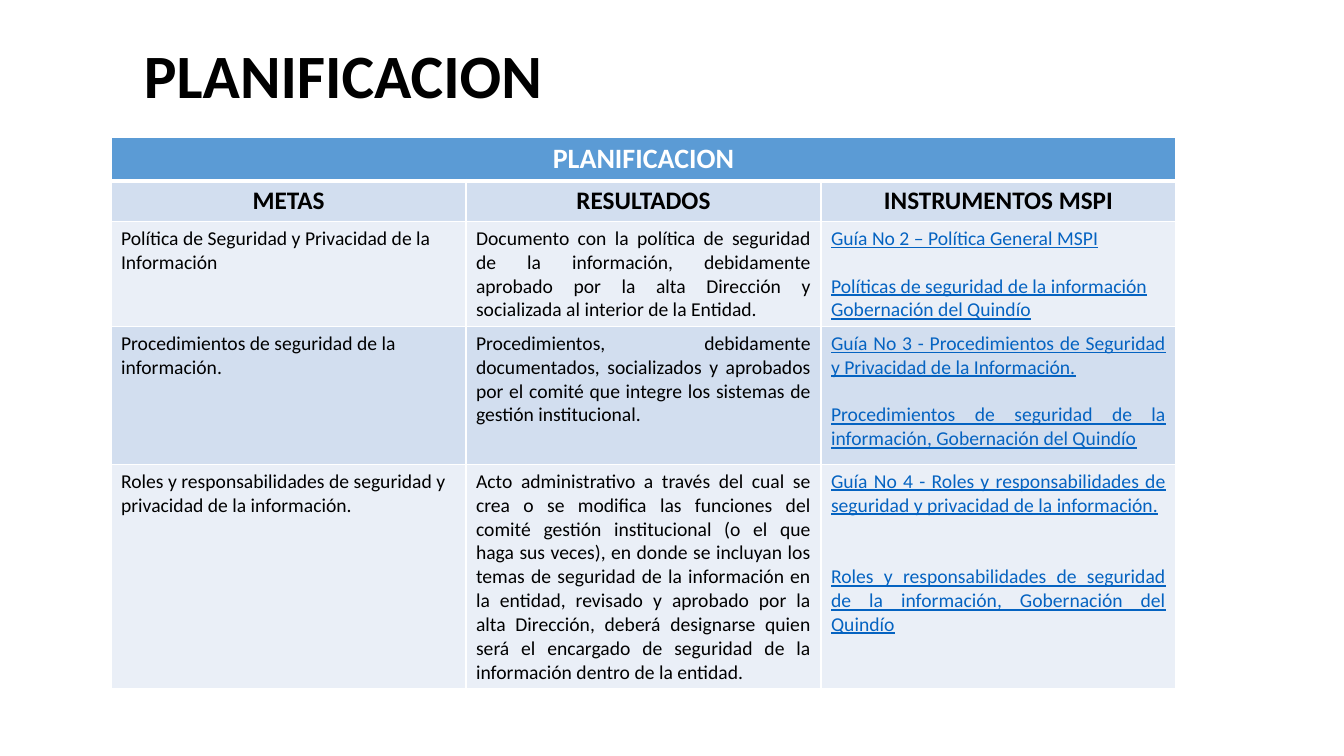
from lxml.etree import SubElement
from pptx import Presentation
from pptx.dml.color import RGBColor
from pptx.enum.text import PP_ALIGN
from pptx.oxml.ns import qn
from pptx.util import Emu, Pt

EMU_PER_PX = 914400 / 100.8
FONT = "Calibri"
BLACK, WHITE, LINK = "000000", "FFFFFF", "0563C1"
HEADER_FILL, BAND_FILLS = "5B9BD5", ("D2DEEF", "EAEFF7")
BLANK_LINE = 17  # points, one line of 14 pt text
COLUMN_WIDTH = 355
ROW_HEIGHTS = (42, 41, 105, 138, 224)

HEADINGS = ("METAS", "RESULTADOS", "INSTRUMENTOS MSPI")
# Each goal: meta, resultado, instrumentos, alignment of instrumentos, lines between them
GOALS = (
    ("Política de Seguridad y Privacidad de la Información",
     "Documento con la política de seguridad de la información, debidamente aprobado "
     "por la alta Dirección y socializada al interior de la Entidad.",
     ("Guía No 2 – Política General MSPI",
      "Políticas de seguridad de la información Gobernación del Quindío"),
     PP_ALIGN.LEFT, 1),
    ("Procedimientos de seguridad de la información.",
     "Procedimientos, debidamente documentados, socializados y aprobados por el comité "
     "que integre los sistemas de gestión institucional.",
     ("Guía No 3 - Procedimientos de Seguridad y Privacidad de la Información.",
      "Procedimientos de seguridad de la información, Gobernación del Quindío"),
     PP_ALIGN.JUSTIFY, 1),
    ("Roles y responsabilidades de seguridad y privacidad de la información.",
     "Acto administrativo a través del cual se crea o se modifica las funciones del "
     "comité gestión institucional (o el que haga sus veces), en donde se incluyan los "
     "temas de seguridad de la información en la entidad, revisado y aprobado por la "
     "alta Dirección, deberá designarse quien será el encargado de seguridad de la "
     "información dentro de la entidad.",
     ("Guía No 4 - Roles y responsabilidades de seguridad y privacidad de la información.",
      "Roles y responsabilidades de seguridad de la información, Gobernación del Quindío"),
     PP_ALIGN.JUSTIFY, 2),
)


def px(length):
    return Emu(round(length * EMU_PER_PX))


def color(hex_code):
    return RGBColor.from_string(hex_code)


def write(frame, lines, size, hex_code=BLACK, bold=False, align=PP_ALIGN.LEFT,
          underline=False, gap=0):
    """Fill a text frame with one paragraph per line, gap points apart."""
    for index, line in enumerate(lines):
        paragraph = frame.paragraphs[0] if index == 0 else frame.add_paragraph()
        paragraph.text = line
        paragraph.alignment = align
        if index:
            paragraph.space_before = Pt(gap)
        font = paragraph.font
        font.name, font.size = FONT, Pt(size)
        font.bold, font.underline = bold, underline
        font.color.rgb = color(hex_code)


def style_cell(cell, fill, top=1, bottom=1):
    """Give a cell its fill and white borders, with top and bottom widths in points."""
    properties = cell._tc.get_or_add_tcPr()
    for side, width in (("L", 1), ("R", 1), ("T", top), ("B", bottom)):
        border = SubElement(properties, qn(f"a:ln{side}"), w=str(Pt(width)))
        SubElement(SubElement(border, qn("a:solidFill")), qn("a:srgbClr"), val=WHITE)
    cell.fill.solid()
    cell.fill.fore_color.rgb = color(fill)


def add_title(slide, title):
    frame = slide.shapes.add_textbox(px(134), px(40), px(1159), px(146)).text_frame
    frame.word_wrap = True
    write(frame, [title], 44, bold=True)
    frame.paragraphs[0].line_spacing = 0.9


def add_plan_table(slide):
    table = slide.shapes.add_table(
        len(ROW_HEIGHTS), len(HEADINGS), px(111), px(137),
        px(COLUMN_WIDTH * len(HEADINGS)), px(sum(ROW_HEIGHTS))).table
    for column in table.columns:
        column.width = px(COLUMN_WIDTH)
    for row, height in zip(table.rows, ROW_HEIGHTS):
        row.height = px(height)

    for row_index, row in enumerate(table.rows):
        fill = BAND_FILLS[(row_index - 1) % 2] if row_index else HEADER_FILL
        for cell in row.cells:
            style_cell(cell, fill, top=3 if row_index == 1 else 1,
                       bottom=3 if row_index == 0 else 1)

    banner = table.cell(0, 0)
    banner.merge(table.cell(0, len(HEADINGS) - 1))
    write(banner.text_frame, ["PLANIFICACION"], 20, WHITE, True, PP_ALIGN.CENTER)
    for column_index, heading in enumerate(HEADINGS):
        write(table.cell(1, column_index).text_frame, [heading], 18, bold=True,
              align=PP_ALIGN.CENTER)
    for row_index, (goal, result, tools, tools_align, blank_lines) in enumerate(GOALS, 2):
        goal_cell, result_cell, tools_cell = table.rows[row_index].cells
        write(goal_cell.text_frame, [goal], 14)
        write(result_cell.text_frame, [result], 14, align=PP_ALIGN.JUSTIFY)
        write(tools_cell.text_frame, tools, 14, LINK, align=tools_align,
              underline=True, gap=blank_lines * BLANK_LINE)


def main():
    presentation = Presentation()
    presentation.slide_width, presentation.slide_height = px(1344), px(756)
    slide = presentation.slides.add_slide(presentation.slide_layouts[6])
    add_title(slide, "PLANIFICACION")
    add_plan_table(slide)
    presentation.save("out.pptx")


if __name__ == "__main__":
    main()
